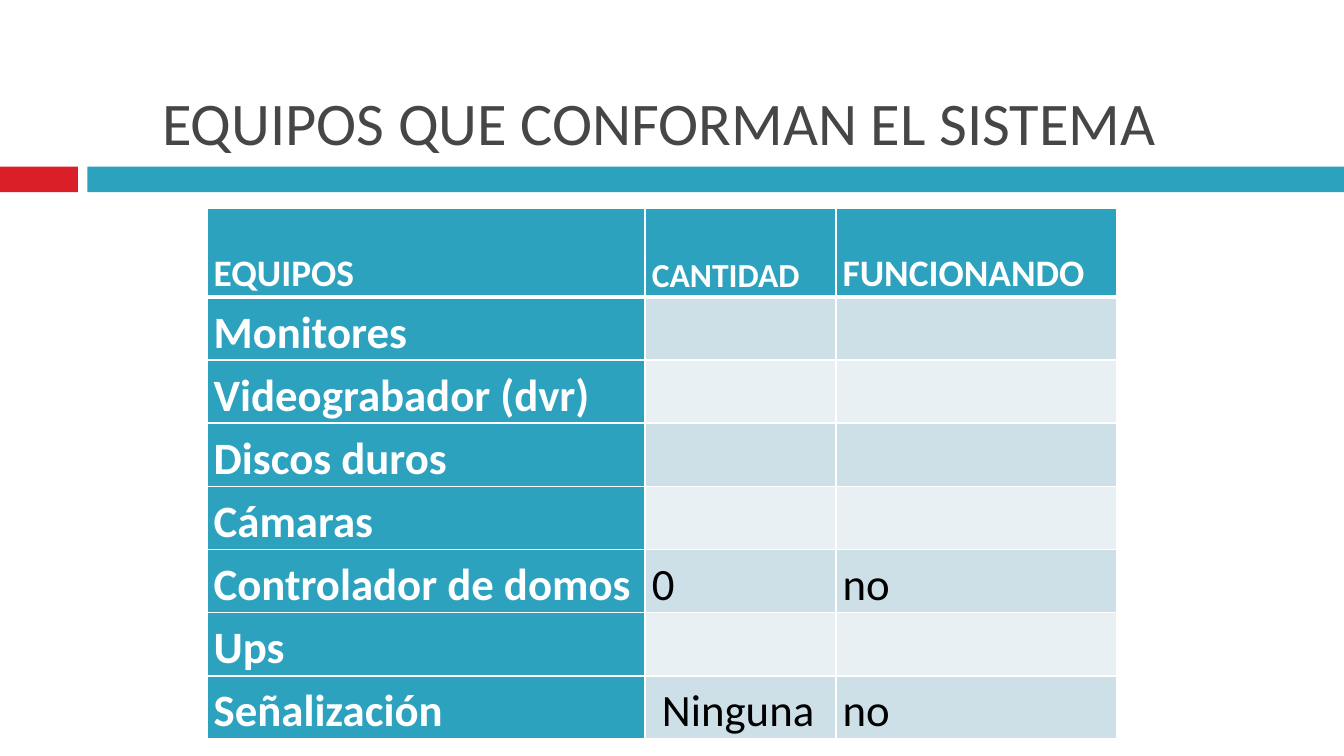
import pptx
import pptx.util
import pptx.dml.color
import pptx.enum.shapes
import pptx.enum.text
import lxml.etree

Inches = pptx.util.Inches
Pt = pptx.util.Pt
RGBColor = pptx.dml.color.RGBColor
ANCHOR = pptx.enum.text.MSO_ANCHOR

RED = RGBColor(0xDA, 0x1F, 0x28)
TEAL = RGBColor(0x2D, 0xA2, 0xBF)
GRAY = RGBColor(0x46, 0x46, 0x46)
WHITE = RGBColor(0xFF, 0xFF, 0xFF)
BLACK = RGBColor(0, 0, 0)
BANDS = [RGBColor(0xE8, 0xF0, 0xF4), RGBColor(0xCD, 0xE0, 0xE8)]
FONT = "Calibri"
NS = "{http://schemas.openxmlformats.org/drawingml/2006/main}"


def edge(cell, side, width):
    line = lxml.etree.SubElement(
        cell._tc.get_or_add_tcPr(), NS + "ln" + side, w=str(Pt(width)))
    fill = lxml.etree.SubElement(line, NS + "solidFill")
    lxml.etree.SubElement(fill, NS + "srgbClr", val=str(WHITE))


deck = pptx.Presentation()
deck.slide_width = Inches(10)
deck.slide_height = deck.slide_width * 9 // 16
slide = deck.slides.add_slide(deck.slide_layouts[5])

for left, width, color in [(0, 0.58, RED), (0.65, 9.35, TEAL)]:
    bar = slide.shapes.add_shape(
        pptx.enum.shapes.MSO_SHAPE.RECTANGLE,
        Inches(left), Inches(1.24), Inches(width), Inches(0.19))
    bar.shadow.inherit = False
    bar.fill.solid()
    bar.fill.fore_color.rgb = color
    bar.line.fill.background()

title = slide.shapes.title
title.left, title.top = Inches(0.17), Inches(0.13)
title.width, title.height = Inches(9.47), Inches(1.1)
frame = title.text_frame
frame.text = "EQUIPOS QUE CONFORMAN EL SISTEMA"
frame.word_wrap = True
frame.vertical_anchor = ANCHOR.BOTTOM
frame.margin_bottom = Inches(0.06)
head = frame.paragraphs[0]
head.alignment = pptx.enum.text.PP_ALIGN.CENTER
head.font.name = FONT
head.font.size = Pt(32.4)
head.font.color.rgb = GRAY

rows = [
    ("EQUIPOS", "CANTIDAD", "FUNCIONANDO"),
    ("Monitores", "", ""),
    ("Videograbador (dvr)", "", ""),
    ("Discos duros", "", ""),
    ("Cámaras", "", ""),
    ("Controlador de domos", "0", "no"),
    ("Ups", "", ""),
    ("Señalización", " Ninguna", "no"),
]
widths = [3.26, 1.42, 2.09]
sizes = [20, 18, 20]
table = slide.shapes.add_table(
    len(rows), len(widths), Inches(1.54), Inches(1.55),
    Inches(sum(widths)), Inches(3.95)).table
table.first_col = True
for col, width in zip(table.columns, widths):
    col.width = Inches(width)

for r, texts in enumerate(rows):
    table.rows[r].height = Inches(0.47 if r else 0.66)
    for c, text in enumerate(texts):
        cell = table.cell(r, c)
        label = r == 0 or c == 0
        for side in "LRTB":
            thick = (r, side) in [(0, "B"), (1, "T")]
            edge(cell, side, 3 if thick else 1)
        cell.fill.solid()
        cell.fill.fore_color.rgb = TEAL if label else BANDS[r % 2]
        cell.vertical_anchor = ANCHOR.BOTTOM
        cell.margin_left = cell.margin_right = Inches(0.05)
        cell.margin_top = cell.margin_bottom = 0
        cell.text = text
        para = cell.text_frame.paragraphs[0]
        para.line_spacing = 1.15
        para.font.name = FONT
        para.font.size = Pt(24 if r else sizes[c])
        para.font.bold = label
        para.font.color.rgb = WHITE if label else BLACK

deck.save("out.pptx")
